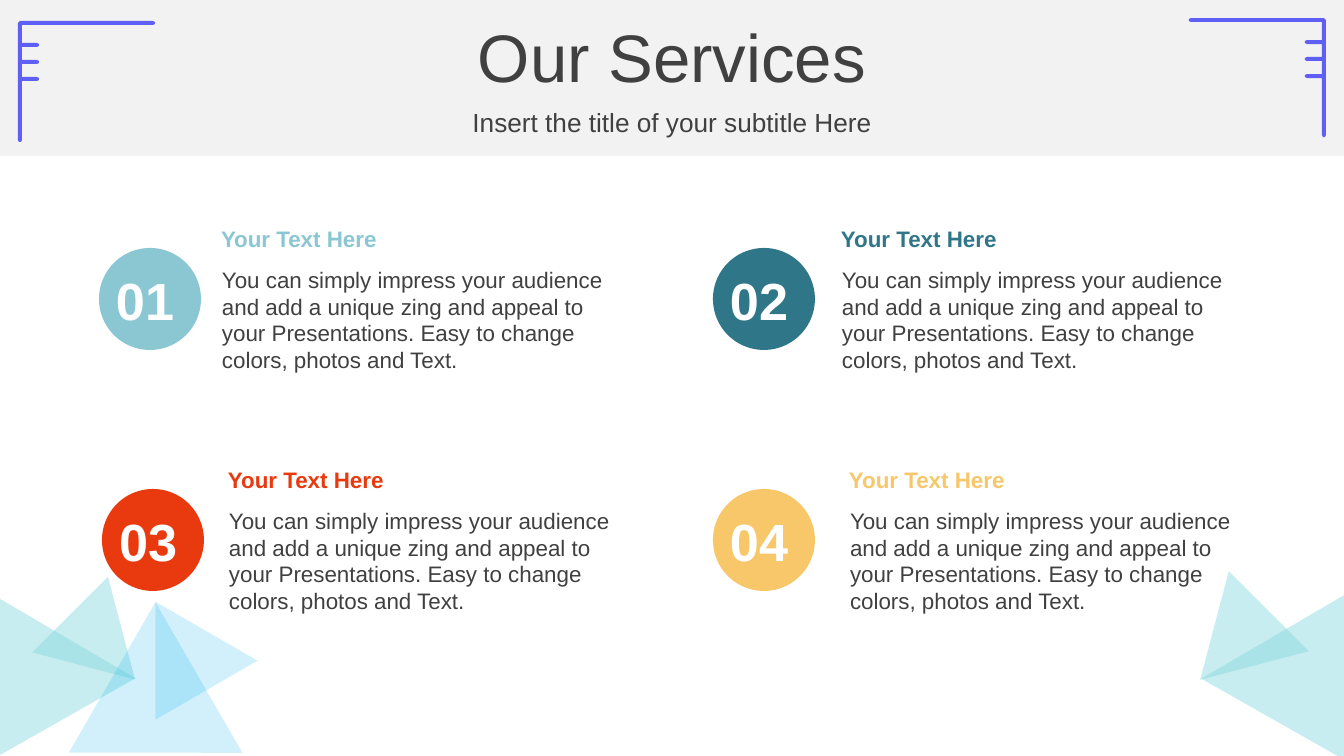
from lxml import etree
from pptx import Presentation
from pptx import util as u
from pptx.dml.color import RGBColor
from pptx.enum import shapes, text
from pptx.oxml import ns

WIDTH, HEIGHT = 1344, 756
PX = 914400 / 100.8
DARK = "404040"
BODY = ("You can simply impress your audience and add a unique zing and appeal to "
        "your Presentations. Easy to change colors, photos and Text.")
SERVICES = [
    ("01", "8AC7D3", 99, 248, 212),
    ("02", "307689", 713, 248, 832),
    ("03", "E93A0F", 102, 489, 219),
    ("04", "F7C76A", 713, 489, 840),
]
BRACKETS = [(18, 21, 1, 121), (1326, 18, -1, 119)]
CORNER_TRIANGLES = [
    (-46, 629, 158, 136, 210.3, "85D8DE", 45),
    (49, 601, 107, 92, 135, "85D8DE", 45),
    (1226, 627, 166, 143, 149.7, "85D8DE", 45),
    (1178, 597, 113, 97, 225, "85D8DE", 45),
]
FRONT_TRIANGLES = [
    (47, 640, 174, 150, 240, "00B0F0", 18),
    (122, 595, 118, 102, 330, "00B0F0", 18),
]

prs = Presentation()
prs.slide_width, prs.slide_height = round(WIDTH * PX), round(HEIGHT * PX)
s = prs.slides.add_slide(prs.slide_layouts[6])


def rgb(color):
    return RGBColor.from_string(color)


def emu(*lengths):
    return [round(n * PX) for n in lengths]


def paint(sp, color, alpha=None):
    sp.shadow.inherit = False
    sp.fill.solid()
    sp.fill.fore_color.rgb = rgb(color)
    sp.line.fill.background()
    if alpha:
        clr = sp.fill._xPr.find(".//" + ns.qn("a:srgbClr"))
        etree.SubElement(clr, ns.qn("a:alpha")).set("val", str(alpha * 1000))


def add_shape(kind, x, y, w, h, color, alpha=None, rotation=0):
    sp = s.shapes.add_shape(kind, *emu(x, y, w, h))
    sp.rotation = rotation
    paint(sp, color, alpha)


def add_text(words, x, y, w, h, size=16, color=DARK, bold=False,
             align=text.PP_ALIGN.LEFT, spacing=1.0, pad=5):
    tf = s.shapes.add_textbox(*emu(x, y, w, h)).text_frame
    tf.word_wrap = True
    tf.vertical_anchor = text.MSO_ANCHOR.MIDDLE
    tf.margin_left, tf.margin_right, tf.margin_top, tf.margin_bottom = emu(10, 10, pad, pad)
    p = tf.paragraphs[0]
    p.alignment = align
    p.line_spacing = spacing
    r = p.add_run()
    r.text = words
    r.font.name = "Arial"
    r.font.size = u.Pt(size)
    r.font.bold = bold
    r.font.color.rgb = rgb(color)


def add_bracket(x, y, side, height):
    outline = [(0, 2), (2, 0), (135, 0), (137, 1), (137, 3), (135, 4), (4, 4)]
    for tooth in (22, 39, 56):
        outline += [(4, tooth), (19, tooth), (21, tooth + 1),
                    (21, tooth + 3), (19, tooth + 4), (4, tooth + 4)]
    outline += [(4, height - 2), (3, height), (1, height), (0, height - 2)]
    points = [(x + side * dx, y + dy) for dx, dy in outline]
    fb = s.shapes.build_freeform(*points[0], scale=PX)
    fb.add_line_segments(points[1:])
    paint(fb.convert_to_shape(), "5F5FF6")


def add_triangles(triangles):
    for x, y, w, h, rotation, color, alpha in triangles:
        add_shape(shapes.MSO_SHAPE.ISOSCELES_TRIANGLE, x, y, w, h, color, alpha, rotation)


add_shape(shapes.MSO_SHAPE.RECTANGLE, 0, 0, WIDTH, 156, "F2F2F2")
for bracket in BRACKETS:
    add_bracket(*bracket)
add_triangles(CORNER_TRIANGLES)

center = text.PP_ALIGN.CENTER
add_text("Our Services", 0, 18, WIDTH, 85, size=48, align=center, spacing=0.9)
add_text("Insert the title of your subtitle Here", 0, 103, WIDTH, 42,
         size=18.7, align=center, spacing=0.9)

for number, color, x, y, text_x in SERVICES:
    add_shape(shapes.MSO_SHAPE.OVAL, x, y, 102, 102, color)
    add_text(number, x + 7, y + 20, 89, 64, size=37.3, color="FFFFFF", bold=True, pad=0)
    add_text(BODY, text_x, y + 12, 430, 119)
    add_text("Your Text Here", text_x - 1, y - 28, 431, 37, color=color, bold=True)
add_triangles(FRONT_TRIANGLES)

prs.save("out.pptx")
